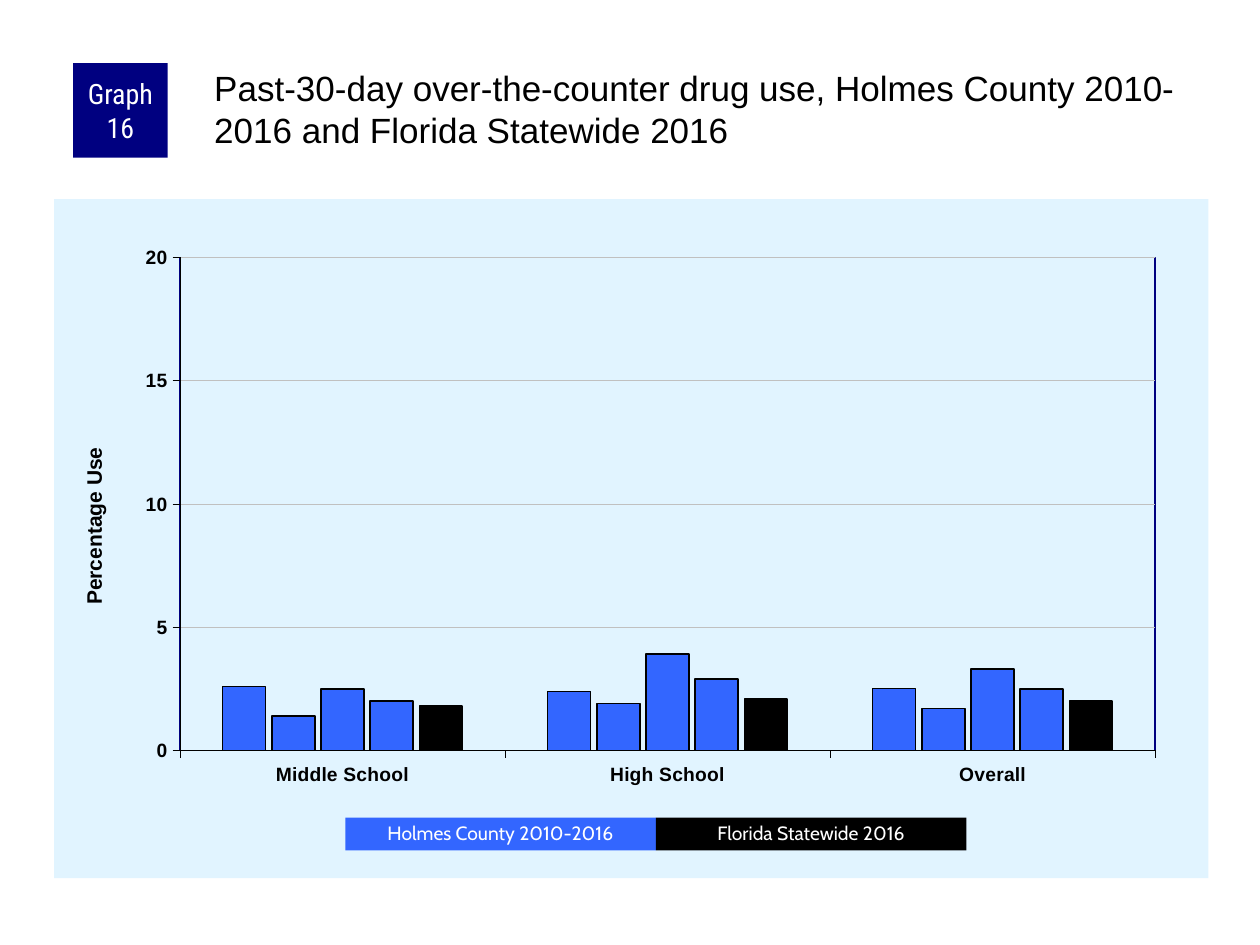
from dataclasses import dataclass

from lxml.etree import SubElement
from pptx import Presentation
from pptx.chart.data import CategoryChartData
from pptx.dml.color import RGBColor
from pptx.enum.chart import XL_CHART_TYPE, XL_TICK_MARK
from pptx.enum.shapes import MSO_SHAPE
from pptx.enum.text import MSO_ANCHOR, PP_ALIGN
from pptx.oxml import parse_xml
from pptx.oxml.ns import nsdecls, qn
from pptx.util import Inches, Pt

WIDE, HIGH = Inches(10), Inches(7.5)
COLORS = {
    "navy": "000080",
    "blue": "3366FF",
    "black": "000000",
    "white": "FFFFFF",
    "pale": "E1F4FF",
    "grey": "C0C0C0",
}
GROUPS = ["Middle School", "High School", "Overall"]


@dataclass
class Area:
    left: float
    top: float
    width: float
    height: float

    def place(self) -> tuple[int, int, int, int]:
        return (
            int(WIDE * self.left / 100),
            int(HIGH * self.top / 100),
            int(WIDE * self.width / 100),
            int(HIGH * self.height / 100),
        )


@dataclass
class Label:
    text: str
    area: Area
    fill: str
    font: str
    size: int
    inset: tuple[float, float]
    space: float = 1.0


@dataclass
class Bar:
    name: str
    values: tuple[float, ...]
    fill: str = "blue"
    line: float = 1


KEY_TOP, KEY_WIDTH, KEY_HEIGHT = 86.53, 24.65, 3.47
LABELS = [
    Label("Graph 16", Area(5.8, 6.67, 7.5, 10), "navy", "Roboto Condensed", 16, (0.05, 0)),
] + [
    Label(text, Area(27.4 + KEY_WIDTH * col, KEY_TOP, KEY_WIDTH, KEY_HEIGHT),
          fill, "Cabin", 11, (0.1, 0.05), 0.9)
    for col, (text, fill) in enumerate([
        ("Holmes County 2010-2016", "blue"),
        ("Florida Statewide 2016", "black"),
    ])
]
BARS = [
    Bar("Series 1", (2.6, 2.4, 2.5), line=0.75),
    Bar("Series 2", (1.4, 1.9, 1.7)),
    Bar("Series 3", (2.5, 3.9, 3.3)),
    Bar("Series 4", (2, 2.9, 2.5)),
    Bar("Series 5", (1.8, 2.1, 2), "black"),
]


def tint(name: str) -> RGBColor:
    return RGBColor.from_string(COLORS[name])


def set_font(font, name: str, size: float, color: str, bold: bool = False) -> None:
    font.name, font.size, font.bold = name, Pt(size), bold
    font.color.rgb = tint(color)


def set_fill(fill, color: str) -> None:
    fill.solid()
    fill.fore_color.rgb = tint(color)


def set_line(line, color: str, width: float) -> None:
    line.color.rgb = tint(color)
    line.width = Pt(width)


def draw_label(slide, label: Label) -> None:
    shape = slide.shapes.add_shape(MSO_SHAPE.RECTANGLE, *label.area.place())
    shape.shadow.inherit = False
    set_fill(shape.fill, label.fill)
    shape.line.fill.background()
    frame = shape.text_frame
    frame.text = label.text
    frame.word_wrap = True
    frame.vertical_anchor = MSO_ANCHOR.MIDDLE
    side, edge = label.inset
    frame.margin_left = frame.margin_right = Inches(side)
    frame.margin_top = frame.margin_bottom = Inches(edge)
    para = frame.paragraphs[0]
    para.alignment = PP_ALIGN.CENTER
    para.line_spacing = label.space
    set_font(para.runs[0].font, label.font, label.size, "white")


def draw_title(slide, text: str, area: Area) -> None:
    frame = slide.shapes.add_textbox(*area.place()).text_frame
    frame.text = text
    frame.word_wrap = True
    frame.margin_left = frame.margin_top = Inches(0.03)
    frame.margin_right = frame.margin_bottom = 0
    set_font(frame.paragraphs[0].runs[0].font, "Arial", 20, "black")


def set_layout(owner, after: str, **parts: str | float) -> None:
    for old in owner.findall(qn("c:layout")):
        owner.remove(old)
    layout = parse_xml(f"<c:layout {nsdecls('c')}/>")
    manual = SubElement(layout, qn("c:manualLayout"))
    for tag, value in parts.items():
        SubElement(manual, qn(f"c:{tag}")).set("val", str(value))
    prior = owner.find(qn(after)) if after else None
    if prior is None:
        owner.insert(0, layout)
    else:
        prior.addnext(layout)


def style_axis(axis) -> None:
    axis.major_tick_mark = XL_TICK_MARK.OUTSIDE
    axis.minor_tick_mark = XL_TICK_MARK.NONE
    set_font(axis.tick_labels.font, "Arial", 11, "black", True)
    set_line(axis.format.line, "black", 0.25)


def draw_chart(slide, area: Area) -> None:
    data = CategoryChartData()
    data.categories = GROUPS
    for bar in BARS:
        data.add_series(bar.name, bar.values)
    chart = slide.shapes.add_chart(
        XL_CHART_TYPE.COLUMN_CLUSTERED, *area.place(), data).chart
    chart.has_legend = chart.has_title = False
    set_font(chart.font, "Arial", 8, "black")
    plot = chart.plots[0]
    plot.gap_width, plot.overlap = 200, -15
    plot.vary_by_categories = False
    for bar, series in zip(BARS, plot.series):
        set_fill(series.format.fill, bar.fill)
        set_line(series.format.line, "black", bar.line)
        series.invert_if_negative = False

    style_axis(chart.category_axis)
    axis = chart.value_axis
    style_axis(axis)
    axis.minimum_scale, axis.maximum_scale, axis.major_unit = 0, 20, 5
    axis.tick_labels.number_format = "0"
    axis.tick_labels.number_format_is_linked = False
    set_line(axis.major_gridlines.format.line, "grey", 0.25)
    title = axis.axis_title
    title.text_frame.text = "Percentage Use"
    set_font(title.text_frame.paragraphs[0].runs[0].font, "Arial", 12, "black", True)
    set_layout(title._element, "c:tx", xMode="edge", yMode="edge", x=0.02, y=0.36)

    space = chart._chartSpace
    field = space.chart.plotArea
    set_layout(field, "", layoutTarget="inner", xMode="edge", yMode="edge",
               x=0.109, y=0.086, w=0.845, h=0.726)
    field.append(parse_xml(
        f'<c:spPr {nsdecls("c", "a")}><a:noFill/><a:ln w="{Pt(1)}"><a:solidFill>'
        f'<a:srgbClr val="{COLORS["navy"]}"/></a:solidFill></a:ln></c:spPr>'))
    space.chart.addnext(parse_xml(
        f'<c:spPr {nsdecls("c", "a")}><a:solidFill><a:srgbClr val="{COLORS["pale"]}"/>'
        f'</a:solidFill><a:ln><a:noFill/></a:ln></c:spPr>'))


def main() -> None:
    deck = Presentation()
    deck.slide_width, deck.slide_height = WIDE, HIGH
    slide = deck.slides.add_slide(deck.slide_layouts[6])
    draw_chart(slide, Area(4.3, 21.07, 91.6, 71.87))
    draw_title(slide, "Past-30-day over-the-counter drug use, Holmes County 2010-2016 "
               "and Florida Statewide 2016", Area(16.7, 6.67, 79.2, 11.07))
    for label in LABELS:
        draw_label(slide, label)
    deck.save("out.pptx")


if __name__ == "__main__":
    main()
